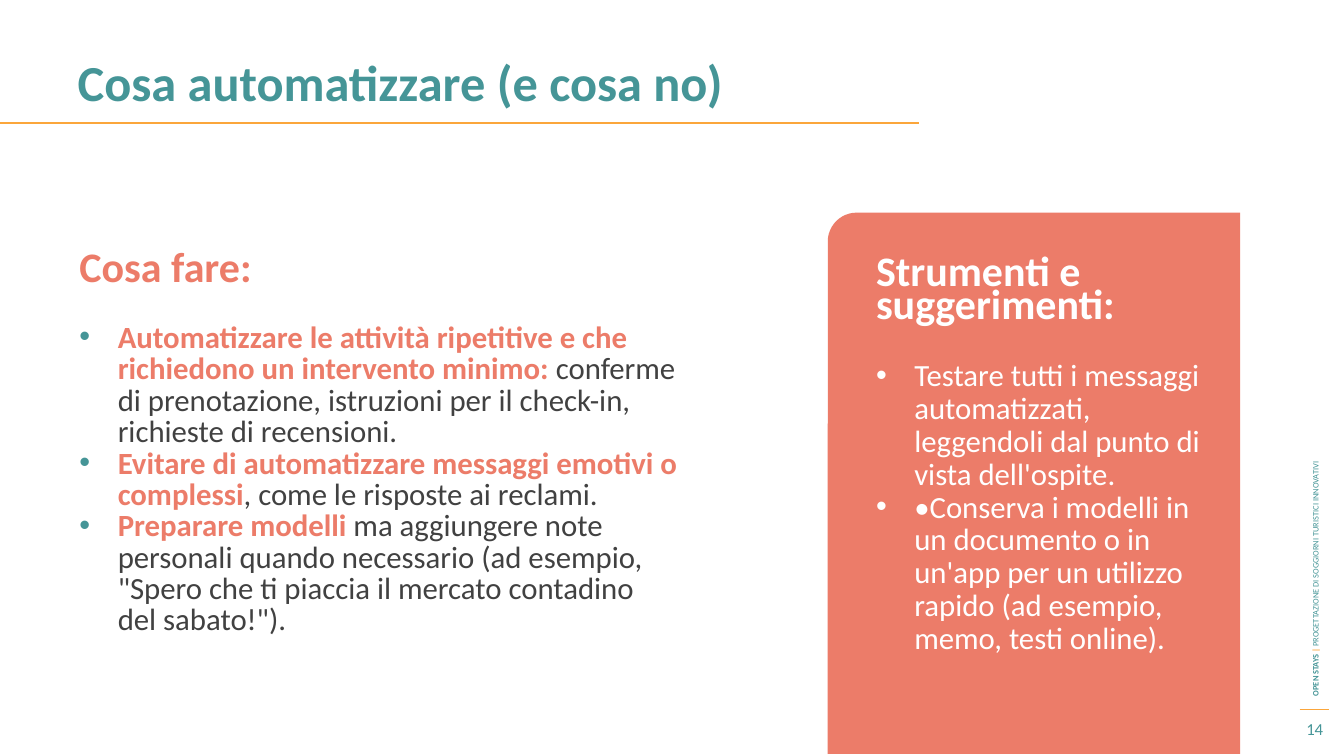
from lxml import etree
from pptx import Presentation
from pptx.dml.color import RGBColor
from pptx.enum.shapes import MSO_CONNECTOR, MSO_SHAPE
from pptx.enum.text import MSO_ANCHOR, MSO_AUTO_SIZE, PP_ALIGN
from pptx.oxml.ns import qn
from pptx.util import Pt

PX = 9144  # EMU, 100 px to the inch
TEAL = RGBColor(0x45, 0x95, 0x97)
ORANGE = RGBColor(0xFB, 0xA6, 0x3B)
CORAL = RGBColor(0xEC, 0x7C, 0x69)
DARK = RGBColor(0x41, 0x41, 0x41)
WHITE = RGBColor(0xFF, 0xFF, 0xFF)
FONT = "Calibri"
INDENT = 38

TITLE = "Cosa automatizzare (e cosa no)"
ACTIONS = [
    ("Automatizzare le attività ripetitive e che richiedono un intervento minimo: ",
     "conferme di prenotazione, istruzioni per il check-in, richieste di recensioni."),
    ("Evitare di automatizzare messaggi emotivi o complessi",
     ", come le risposte ai reclami."),
    ("Preparare modelli ",
     "ma aggiungere note personali quando necessario (ad esempio, "
     "\"Spero che ti piaccia il mercato contadino del sabato!\")."),
]
TIPS = [
    "Testare tutti i messaggi automatizzati, leggendoli dal punto di vista dell'ospite.",
    "•Conserva i modelli in un documento o in un'app per un utilizzo rapido "
    "(ad esempio, memo, testi online).",
]


def px(*lengths):
    return [length * PX for length in lengths]


def add_frame(slide, box, anchor=MSO_ANCHOR.TOP):
    frame = slide.shapes.add_textbox(*px(*box)).text_frame
    frame.word_wrap = True
    frame.vertical_anchor = anchor
    return frame


def next_paragraph(frame):
    """Return the unused first paragraph, or a new one after the others."""
    first = frame.paragraphs[0]
    return frame.add_paragraph() if first.runs else first


def add_bullet(paragraph, color):
    props = paragraph._p.get_or_add_pPr()
    props.set("marL", str(INDENT * PX))
    props.set("indent", str(-INDENT * PX))
    bullet_color = etree.SubElement(props, qn("a:buClr"))
    etree.SubElement(bullet_color, qn("a:srgbClr")).set("val", str(color))
    etree.SubElement(props, qn("a:buFont")).set("typeface", "Arial")
    etree.SubElement(props, qn("a:buChar")).set("char", "•")


def set_paragraph(paragraph, size, parts, spacing=None):
    """Fill a paragraph from (text, colour, bold) parts."""
    if spacing:
        paragraph.line_spacing = Pt(spacing)
    paragraph.font.name = FONT
    paragraph.font.size = Pt(size)
    if len(parts) == 1:
        paragraph.font.color.rgb, paragraph.font.bold = parts[0][1:]
    for text, color, bold in parts:
        run = paragraph.add_run()
        run.text = text
        if len(parts) > 1:
            run.font.color.rgb, run.font.bold = color, bold


def add_rule(slide, left, top, width, weight):
    rule = slide.shapes.add_connector(
        MSO_CONNECTOR.STRAIGHT, *px(left, top, left + width, top))
    rule.line.color.rgb = ORANGE
    rule.line.width = Pt(weight)
    etree.SubElement(rule._element.spPr, qn("a:effectLst"))


def add_title(slide, left, top, width, height):
    title = slide.shapes.title
    title.left, title.top, title.width, title.height = px(left, top, width, height)
    frame = title.text_frame
    frame.auto_size = MSO_AUTO_SIZE.NONE
    frame.vertical_anchor = MSO_ANCHOR.TOP
    heading = frame.paragraphs[0]
    heading.alignment = PP_ALIGN.LEFT
    set_paragraph(heading, 36, [(TITLE, TEAL, True)], 37.2)
    add_rule(slide, 0, top + 68, 911, 1.5)


def add_actions(slide, left, top, width, height):
    heading = add_frame(slide, (left, top, width, 88)).paragraphs[0]
    set_paragraph(heading, 30, [("Cosa fare:", CORAL, True)], 29)
    frame = add_frame(slide, (left, top + 73, width, height - 73))
    for lead, detail in ACTIONS:
        action = next_paragraph(frame)
        add_bullet(action, TEAL)
        set_paragraph(action, 22, [(lead, CORAL, True), (detail, DARK, False)], 22.4)


def add_tips_panel(slide, left, top, width, height):
    panel = slide.shapes.add_shape(
        MSO_SHAPE.ROUND_1_RECTANGLE, *px(left, top, width, height))
    panel.adjustments[0] = 0.07
    panel._element.spPr.get_or_add_xfrm().set("flipH", "1")
    panel.shadow.inherit = False
    panel.fill.solid()
    panel.fill.fore_color.rgb = CORAL
    panel.line.fill.background()

    frame = add_frame(slide, (left + 38, top + 44, width - 64, 359))
    set_paragraph(frame.paragraphs[0], 30,
                  [("Strumenti e suggerimenti:", WHITE, True)], 23.4)
    for index, text in enumerate(TIPS):
        tip = next_paragraph(frame)
        add_bullet(tip, WHITE)
        if index == 0:
            tip.space_before = Pt(23.4)
        set_paragraph(tip, 22, [(text, WHITE, False)], 23.4)


def add_side_footer(slide, left, top, width, height):
    """Place the vertical running line above the page number."""
    length, thickness, number_height = 577, 20, 34
    bottom = top + height
    rule_top = bottom - number_height - 2
    center_x, center_y = left + 26, rule_top - 4 - length // 2
    running_box = (center_x - length // 2, center_y - thickness // 2, length, thickness)
    frame = add_frame(slide, running_box, MSO_ANCHOR.MIDDLE)
    slide.shapes[-1].rotation = 270
    set_paragraph(frame.paragraphs[0], 6, [
        ("OPEN STAYS ", TEAL, True),
        ("| ", ORANGE, True),
        ("PROGETTAZIONE DI SOGGIORNI TURISTICI INNOVATIVI", TEAL, False),
    ])
    add_rule(slide, left + 11, rule_top, 29, 0.75)
    number_box = (left, bottom - number_height, width, number_height)
    number = add_frame(slide, number_box, MSO_ANCHOR.MIDDLE).paragraphs[0]
    number.alignment = PP_ALIGN.CENTER
    set_paragraph(number, 12, [("14", TEAL, False)])


def main():
    deck = Presentation()
    deck.slide_width, deck.slide_height = px(1333, 750)
    slide = deck.slides.add_slide(deck.slide_layouts[5])
    add_side_footer(slide, 1278, 122, 52, 618)
    add_tips_panel(slide, 821, 211, 409, 537)
    add_title(slide, 67, 54, 1200, 88)
    add_actions(slide, 69, 243, 614, 473)
    deck.save("out.pptx")


if __name__ == "__main__":
    main()
